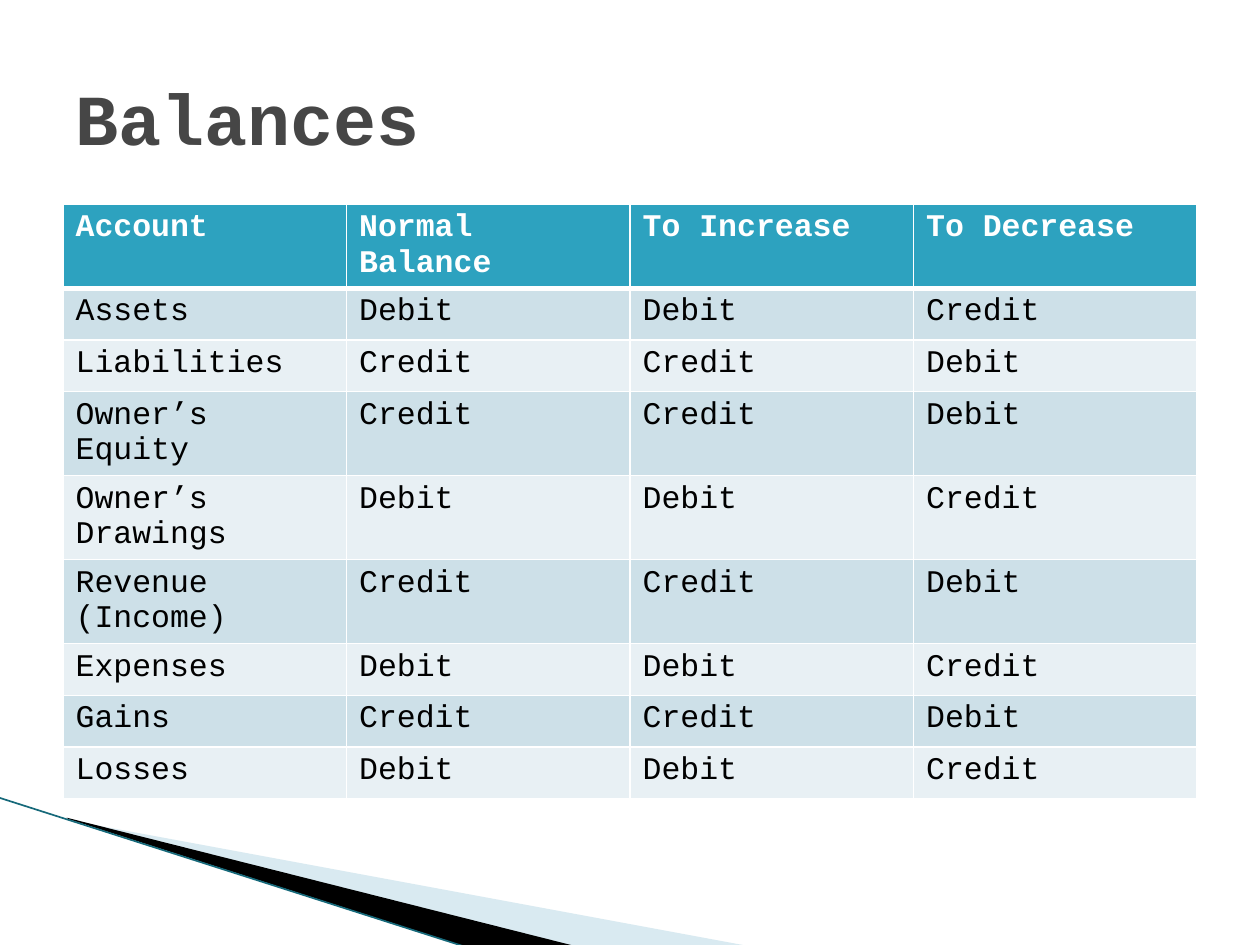
from pptx import Presentation
from pptx.dml.color import RGBColor
from pptx.enum.shapes import MSO_CONNECTOR
from pptx.enum.text import MSO_ANCHOR
from pptx.oxml import parse_xml
from pptx.oxml.ns import nsdecls
from pptx.util import Inches, Pt

TITLE = "Balances"
HEADINGS = ["Account", "Normal Balance", "To Increase", "To Decrease"]
NORMAL_BALANCES = [
    ("Assets", "Debit"),
    ("Liabilities", "Credit"),
    ("Owner’s Equity", "Credit"),
    ("Owner’s Drawings", "Debit"),
    ("Revenue (Income)", "Credit"),
    ("Expenses", "Debit"),
    ("Gains", "Credit"),
    ("Losses", "Debit"),
]
OPPOSITE = {"Debit": "Credit", "Credit": "Debit"}

PALE_WEDGE = [(0.55, 6.51), (5.95, 7.51), (4.56, 7.51), (0.55, 6.5)]
BLACK_WEDGE = [(0.53, 6.49), (4.57, 7.51), (3.72, 7.52), (0.54, 6.5)]
EDGE = [(-0.01, 6.33), (3.71, 7.52)]

FONT = "Courier New"
COLORS = {
    "title": "464646",
    "header": "2DA2BF",
    "odd_row": "CDE0E8",
    "even_row": "E8F0F4",
    "pale_wedge": "A0CBDC",
    "edge": "16697A",
    "black": "000000",
    "white": "FFFFFF",
}
LEFT, WIDTH = 0.5, 9
TABLE_TOP, ROW_HEIGHT = 1.62, 0.41


def rgb(name):
    return RGBColor.from_string(COLORS[name])


def style_font(font, size, color, bold):
    font.name, font.size, font.bold = FONT, Pt(size), bold
    font.color.rgb = rgb(color)


def add_wedge(slide, points, color, opacity=100):
    corners = [(Inches(x), Inches(y)) for x, y in points]
    builder = slide.shapes.build_freeform(*corners[0], scale=1.0)
    builder.add_line_segments(corners[1:], close=True)
    wedge = builder.convert_to_shape()
    wedge.shadow.inherit = False
    wedge.fill.solid()
    wedge.fill.fore_color.rgb = rgb(color)
    wedge.line.fill.background()
    if opacity < 100:
        fill_color = wedge.fill._xPr.solidFill[0]
        fill_color.append(parse_xml(f'<a:alpha {nsdecls("a")} val="{opacity * 1000}"/>'))


def add_edge(slide):
    ends = [Inches(length) for point in EDGE for length in point]
    edge = slide.shapes.add_connector(MSO_CONNECTOR.STRAIGHT, *ends)
    edge.line.color.rgb = rgb("edge")
    edge.line.width = Pt(0.95)
    edge._element.spPr.append(parse_xml(f'<a:effectLst {nsdecls("a")}/>'))


def set_borders(cell, bottom):
    widths = {"lnL": 1, "lnR": 1, "lnT": 1, "lnB": bottom}
    for position, (side, width) in enumerate(widths.items()):
        border = parse_xml(
            f'<a:{side} {nsdecls("a")} w="{Pt(width)}"><a:solidFill>'
            f'<a:srgbClr val="{COLORS["white"]}"/></a:solidFill></a:{side}>'
        )
        cell._tc.get_or_add_tcPr().insert(position, border)


def add_balances(slide):
    rows = [HEADINGS] + [
        [account, side, side, OPPOSITE[side]] for account, side in NORMAL_BALANCES
    ]
    table = slide.shapes.add_table(
        len(rows), len(HEADINGS), Inches(LEFT), Inches(TABLE_TOP),
        Inches(WIDTH), Inches(ROW_HEIGHT * len(rows)),
    ).table
    for r, row in enumerate(rows):
        is_header = r == 0
        fill = "header" if is_header else "odd_row" if r % 2 else "even_row"
        for c, text in enumerate(row):
            cell = table.cell(r, c)
            cell.text_frame.text = text
            run = cell.text_frame.paragraphs[0].runs[0]
            style_font(run.font, 18, "white" if is_header else "black", is_header)
            cell.fill.solid()
            cell.fill.fore_color.rgb = rgb(fill)
            # The first body row shares the thick rule under the header.
            set_borders(cell, bottom=3 if is_header else 1)
            if r == 1:
                cell._tc.tcPr.find("{*}lnT").set("w", str(Pt(3)))


def add_title(slide):
    frame = slide.shapes.add_textbox(
        Inches(LEFT), Inches(0.3), Inches(WIDTH), Inches(1.25)
    ).text_frame
    frame.word_wrap = True
    frame.vertical_anchor = MSO_ANCHOR.MIDDLE
    frame.text = TITLE
    style_font(frame.paragraphs[0].runs[0].font, 41, "title", True)


def main():
    deck = Presentation()
    deck.slide_width, deck.slide_height = Inches(10), Inches(7.5)
    slide = deck.slides.add_slide(deck.slide_layouts[6])
    add_wedge(slide, PALE_WEDGE, "pale_wedge", opacity=40)
    add_wedge(slide, BLACK_WEDGE, "black")
    add_edge(slide)
    add_balances(slide)
    add_title(slide)
    deck.save("out.pptx")


if __name__ == "__main__":
    main()
